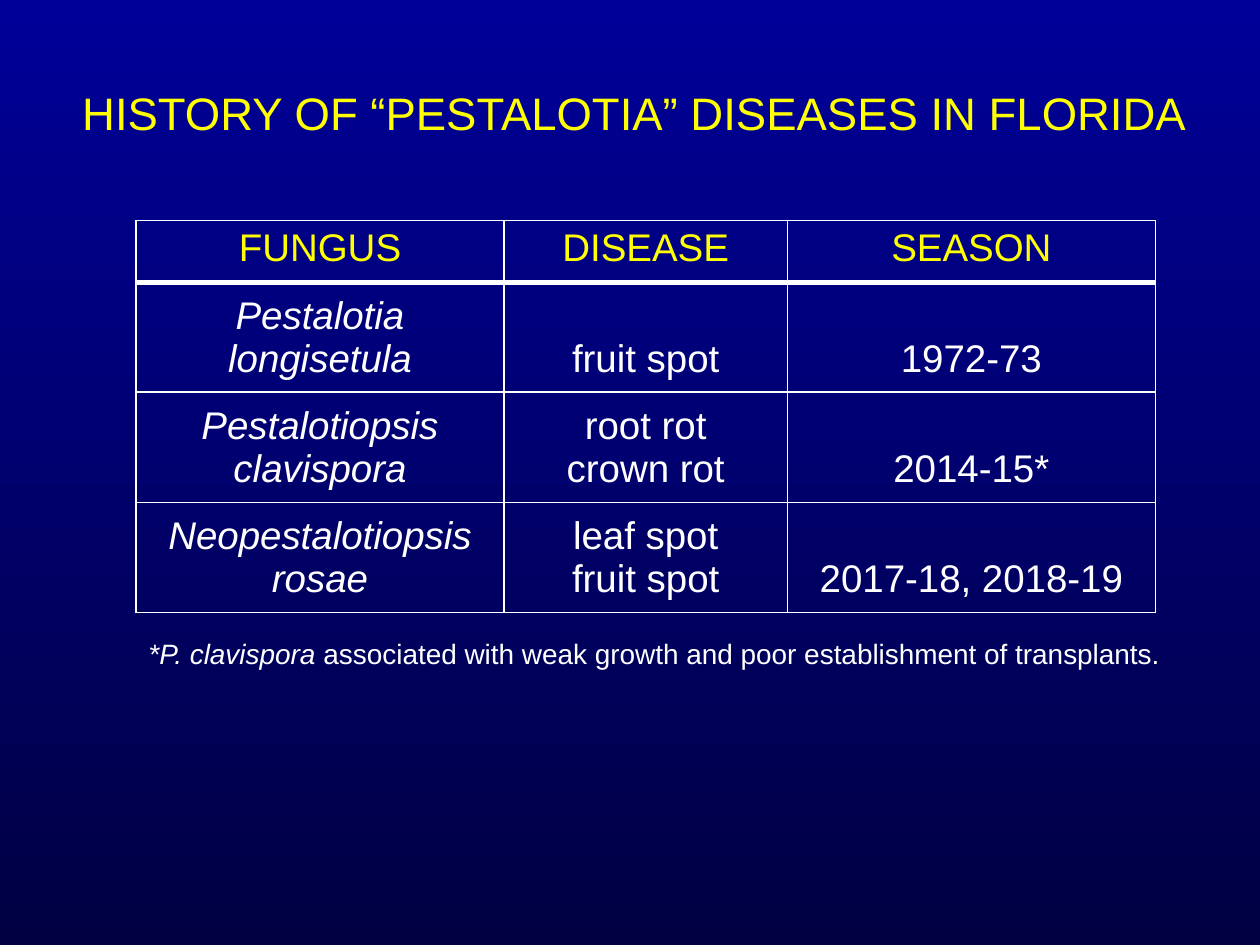
from lxml import etree
from pptx import Presentation
from pptx.dml.color import RGBColor
from pptx.enum.text import MSO_ANCHOR, PP_ALIGN
from pptx.oxml.ns import qn
from pptx.util import Inches, Pt

CENTER, LEFT = PP_ALIGN.CENTER, PP_ALIGN.LEFT
TOP, MIDDLE, BOTTOM = MSO_ANCHOR.TOP, MSO_ANCHOR.MIDDLE, MSO_ANCHOR.BOTTOM
YELLOW, WHITE = "FFFF00", "FFFFFF"
SHADES = ["000099", "000042"]

# Content: one list per paragraph, one (text, italic) pair per run
TITLE = "HISTORY OF “PESTALOTIA” DISEASES IN FLORIDA"
HEADS = ["FUNGUS", "DISEASE", "SEASON"]
ROWS = [
    ["Pestalotia\nlongisetula", "fruit spot", "1972-73"],
    ["Pestalotiopsis\nclavispora", "root rot\ncrown rot", "2014-15*"],
    ["Neopestalotiopsis\nrosae", "leaf spot\nfruit spot", "2017-18, 2018-19"],
]
NOTE = [("*P. clavispora", True),
        (" associated with weak growth and poor establishment of transplants.", False)]

# Grid in inches
X, Y = 1.08, 1.75
WIDTHS = [2.92, 2.25, 2.92]
HEIGHTS = [0.49] + [0.85] * len(ROWS)


def color(code):
    return RGBColor.from_string(code)


def write(frame, paras, size, tint=WHITE, align=CENTER):
    for i, runs in enumerate(paras):
        para = frame.paragraphs[0] if i == 0 else frame.add_paragraph()
        para.alignment = align
        for text, italic in runs:
            run = para.add_run()
            run.text = text
            font = run.font
            font.name, font.size, font.italic = "Arial", Pt(size), italic
            font.color.rgb = color(tint)


def add_text(slide, box, paras, size, anchor=TOP, **style):
    frame = slide.shapes.add_textbox(*map(Inches, box)).text_frame
    frame.word_wrap = True
    frame.vertical_anchor = anchor
    write(frame, paras, size, **style)


def border(cell, **sides):
    props = cell._tc.get_or_add_tcPr()
    for i, (side, width) in enumerate(sides.items()):
        line = etree.Element(qn("a:ln" + side), w=str(Pt(width)))
        fill = etree.SubElement(line, qn("a:solidFill"))
        etree.SubElement(fill, qn("a:srgbClr"), val=WHITE)
        props.insert(i, line)


prs = Presentation()
prs.slide_width, prs.slide_height = Inches(10), Inches(7.5)
slide = prs.slides.add_slide(prs.slide_layouts[6])

# Background
back = slide.background.fill
back.gradient()
back.gradient_angle = 270
for stop, shade, place in zip(back.gradient_stops, SHADES, (0, 1)):
    stop.color.rgb = color(shade)
    stop.position = place

# Title
add_text(slide, (0.25, 0.58, 9.58, 0.62), [[(TITLE, False)]], 26,
         anchor=MIDDLE, tint=YELLOW)

# Table
table = slide.shapes.add_table(
    len(HEIGHTS), len(WIDTHS), Inches(X), Inches(Y),
    Inches(sum(WIDTHS)), Inches(sum(HEIGHTS))).table
table.first_row = table.horz_banding = False
for col, width in zip(table.columns, WIDTHS):
    col.width = Inches(width)
for row, height in zip(table.rows, HEIGHTS):
    row.height = Inches(height)

for r, texts in enumerate([HEADS] + ROWS):
    head = r == 0
    for c, text in enumerate(texts):
        cell = table.cell(r, c)
        cell.fill.background()
        cell.vertical_anchor = TOP if head else BOTTOM
        cell.margin_bottom = Inches(0.05 if head else 0.09)
        slant = c == 0 and not head
        write(cell.text_frame, [[(line, slant)] for line in text.split("\n")],
              22, tint=YELLOW if head else WHITE)
        border(cell, L=1, R=1, T=3 if r == 1 else 1, B=3 if head else 1)

# Footnote
add_text(slide, (X, 5, 8.42, 0.37), [NOTE], 16, align=LEFT)

prs.save("out.pptx")
